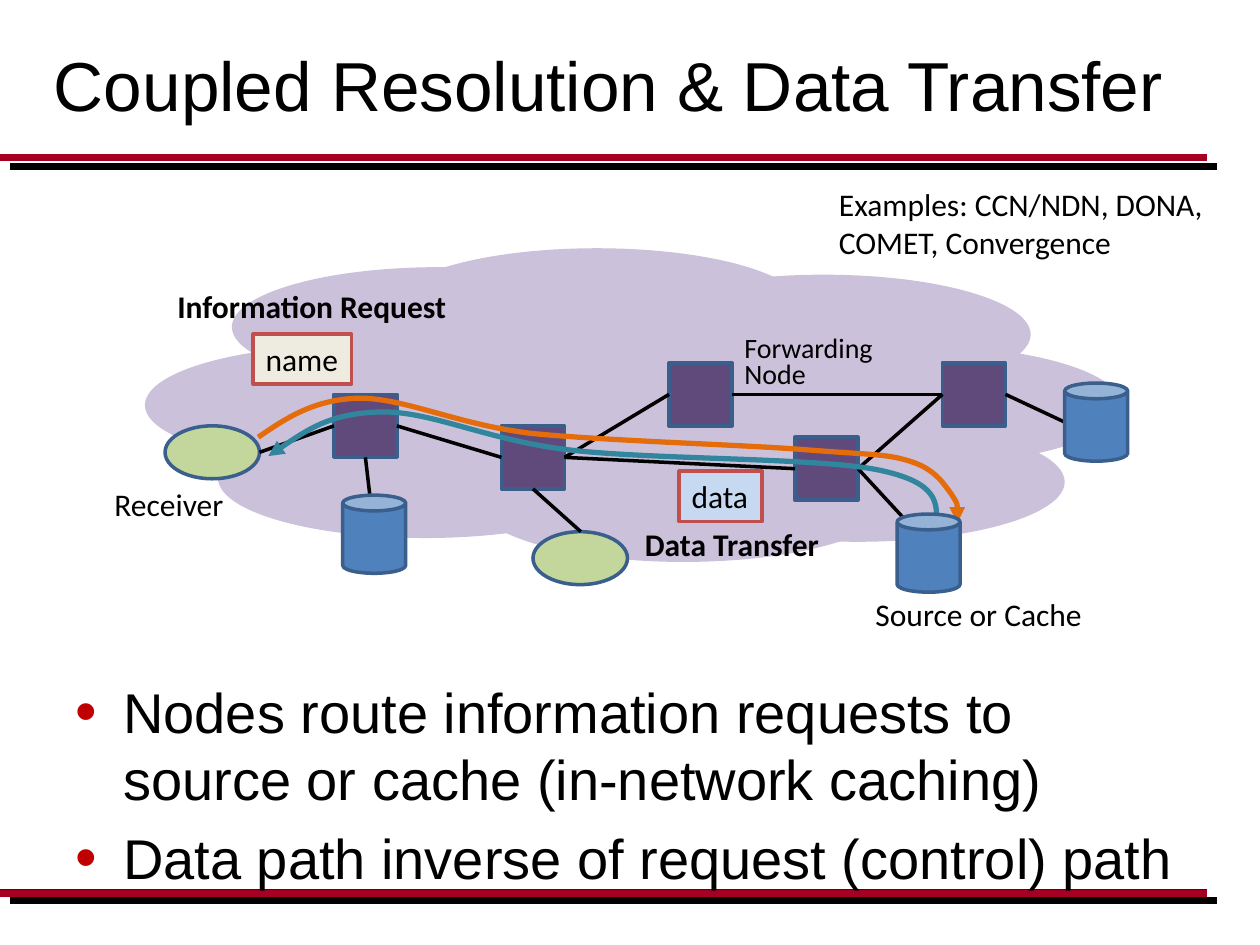
from lxml.etree import SubElement
from pptx import Presentation
from pptx.dml.color import RGBColor
from pptx.enum.shapes import MSO_CONNECTOR, MSO_SHAPE
from pptx.enum.text import MSO_ANCHOR, PP_ALIGN
from pptx.oxml import parse_xml
from pptx.oxml.ns import nsdecls, qn
from pptx.util import Inches, Pt

OUTLINE = "3A5F8C"
NODE_SIZE = 0.5


def color(value):
    return RGBColor.from_string(value)


def write_text(box, lines, size=18, font="Calibri", bold=False, align=PP_ALIGN.LEFT,
               anchor=MSO_ANCHOR.TOP, wrap=True, spacing=None, bullet=None):
    frame = box.text_frame
    frame.word_wrap = wrap
    frame.vertical_anchor = anchor
    for index, line in enumerate(lines):
        para = frame.add_paragraph() if index else frame.paragraphs[0]
        para.alignment = align
        if spacing:
            para.line_spacing = Pt(spacing)
        if bullet:
            para.space_before = Pt(size * 0.2)
            add_bullet(para, bullet)
        span = para.add_run()
        span.text = line
        span.font.name = font
        span.font.size = Pt(size)
        span.font.bold = bold
        span.font.color.rgb = color("000000")


def add_bullet(para, value):
    props = para._p.get_or_add_pPr()
    props.set("marL", str(Inches(0.38)))
    props.set("indent", str(-Inches(0.38)))
    SubElement(SubElement(props, qn("a:buClr")), qn("a:srgbClr")).set("val", value)
    SubElement(props, qn("a:buSzPct")).set("val", "110000")
    SubElement(props, qn("a:buFont")).set("typeface", "Arial")
    SubElement(props, qn("a:buChar")).set("char", "•")


class SlideBuilder:
    def __init__(self, page):
        self.shapes = page.shapes

    def shape(self, kind, left, top, width, height, fill, line=None):
        shape = self.shapes.add_shape(
            kind, Inches(left), Inches(top), Inches(width), Inches(height))
        shape.shadow.inherit = False
        shape.fill.solid()
        shape.fill.fore_color.rgb = color(fill)
        if line:
            shape.line.color.rgb = color(line)
            shape.line.width = Pt(2)
        else:
            shape.line.fill.background()
        return shape

    def text(self, lines, left, top, width, height, **style):
        box = self.shapes.add_textbox(
            Inches(left), Inches(top), Inches(width), Inches(height))
        write_text(box, lines, **style)

    def tag(self, label, left, top, width, fill):
        box = self.shape(MSO_SHAPE.RECTANGLE, left, top, width, 0.4, fill, "C0504D")
        write_text(box, [label], wrap=False)

    def line(self, start, end, stroke="000000", width=2, shadow=False):
        link = self.shapes.add_connector(
            MSO_CONNECTOR.STRAIGHT, *[Inches(value) for value in start + end])
        link.line.color.rgb = color(stroke)
        link.line.width = Pt(width)
        effects = SubElement(link._element.spPr, qn("a:effectLst"))
        if shadow:
            effects.append(parse_xml(
                f'<a:outerShdw {nsdecls("a")} blurRad="0" dist="{Pt(7.8)}" dir="{40 * 60000}" '
                'algn="ctr" rotWithShape="0"><a:srgbClr val="000000"/></a:outerShdw>'))

    def curve(self, points, stroke):
        points = [(Inches(x), Inches(y)) for x, y in points]
        builder = self.shapes.build_freeform(*points[0])
        builder.add_line_segments(points[1:], close=False)
        curve = builder.convert_to_shape()
        curve.shadow.inherit = False
        curve.fill.background()
        curve.line.color.rgb = color(stroke)
        curve.line.width = Pt(3)
        SubElement(curve.line._get_or_add_ln(), qn("a:tailEnd")).set("type", "triangle")
        outline = next(curve._element.iter(qn("a:path")))
        steps = outline.findall(qn("a:lnTo"))
        for first in range(0, len(steps), 3):
            bezier = SubElement(outline, qn("a:cubicBezTo"))
            for step in steps[first:first + 3]:
                bezier.append(step[0])
                outline.remove(step)


def draw_rules(slide):
    for y in (1.25, 7.08):
        slide.line((0, y), (9.58, y), "0000FF", 4, shadow=True)
    for y in (1.25, 7.09):
        slide.line((0, y), (9.58, y), "A50021", 4)


def draw_network(slide):
    cloud = [(2.16, 2.48), (3.09, 1.97), (4.89, 2.18), (1.73, 3.32), (3.78, 3.51),
             (5.16, 3.35), (1.84, 2.12), (1.15, 2.74), (5.61, 2.74), (3.78, 2.77)]
    for left, top in cloud:
        slide.shape(MSO_SHAPE.OVAL, left, top, 3.29, 0.95, "CCC1DA")
    for left, top in [(1.31, 3.38), (4.23, 4.22)]:
        slide.shape(MSO_SHAPE.OVAL, left, top, 0.75, 0.42, "C3D69B", OUTLINE)

    slide.text(["Data Transfer"], 5.02, 4.12, 2.5, 0.4, bold=True)
    slide.text(["Source or Cache"], 6.85, 4.67, 1.86, 0.4, wrap=False)
    slide.text(["Receiver"], 0.81, 3.8, 1.08, 0.4, wrap=False)

    nodes = [(7.48, 2.88), (5.31, 2.88), (6.31, 3.47), (2.65, 3.13), (3.98, 3.38)]
    for left, top in nodes:
        slide.shape(MSO_SHAPE.RECTANGLE, left, top, NODE_SIZE, NODE_SIZE, "604A7B", OUTLINE)
    west = [(left, top + NODE_SIZE / 2) for left, top in nodes]
    east = [(left + NODE_SIZE, y) for left, y in west]
    south = [(left + NODE_SIZE / 2, top + NODE_SIZE) for left, top in nodes]
    upper_right, upper_middle, lower_right, entry, center = range(len(nodes))
    links = [
        ((8.45, 3.35), east[upper_right]),
        ((7.17, 4.11), east[lower_right]),
        (east[lower_right], west[upper_right]),
        (east[upper_middle], west[upper_right]),
        (east[center], west[upper_middle]),
        (east[entry], west[center]),
        (east[center], west[lower_right]),
        ((4.61, 4.22), south[center]),
        ((2.94, 3.97), south[entry]),
        ((2.06, 3.59), west[entry]),
    ]
    for start, end in links:
        slide.line(start, end)

    slide.text(["Forwarding Node"], 5.81, 2.63, 1.5, 0.53, size=16, spacing=15)
    slide.text(["Information Request"], 1.2, 2.32, 2.44, 0.33, bold=True,
               align=PP_ALIGN.RIGHT, spacing=15)


def draw_flows(slide):
    data_flow = [(7.43, 4.17), (7.44, 4), (7.46, 3.83), (6.97, 3.73), (6.48, 3.63),
                 (5.17, 3.65), (4.51, 3.57), (3.85, 3.49), (3.42, 3.26), (3.02, 3.27),
                 (2.62, 3.28), (2.38, 3.45), (2.13, 3.62)]
    request_flow = [(2.05, 3.47), (2.27, 3.32), (2.49, 3.17), (2.85, 3.16), (3.22, 3.16),
                    (3.63, 3.37), (4.22, 3.44), (4.82, 3.5), (5.9, 3.53), (6.4, 3.57),
                    (6.9, 3.61), (7.03, 3.6), (7.22, 3.66), (7.42, 3.72), (7.49, 3.84),
                    (7.55, 3.92), (7.61, 4.01), (7.61, 4.08), (7.6, 4.15)]
    slide.curve(data_flow, "31859C")
    slide.curve(request_flow, "E46C0A")
    for left, top in [(8.45, 3.04), (7.12, 4.08), (2.72, 3.93)]:
        slide.shape(MSO_SHAPE.CAN, left, top, 0.5, 0.62, "4F81BD", OUTLINE)
    slide.tag("name", 2.01, 2.65, 0.78, "EEECE1")
    slide.tag("data", 5.39, 3.74, 0.66, "C6D9F1")


def main():
    deck = Presentation()
    deck.slide_width, deck.slide_height = Inches(10), Inches(7.5)
    slide = SlideBuilder(deck.slides.add_slide(deck.slide_layouts[6]))
    draw_rules(slide)
    slide.text(["Coupled Resolution & Data Transfer"], 0.33, 0, 9.17, 1.33,
               size=39.6, font="Arial", anchor=MSO_ANCHOR.MIDDLE)
    slide.text(["Nodes route information requests to source or cache (in-network caching)",
                "Data path inverse of request (control) path"],
               0.5, 5.33, 9, 1.75, size=32, font="Arial", bullet="C00000")
    draw_network(slide)
    draw_flows(slide)
    slide.text(["Examples: CCN/NDN, DONA, COMET, Convergence"], 6.56, 1.42, 3.27, 0.71)
    deck.save("out.pptx")


if __name__ == "__main__":
    main()
